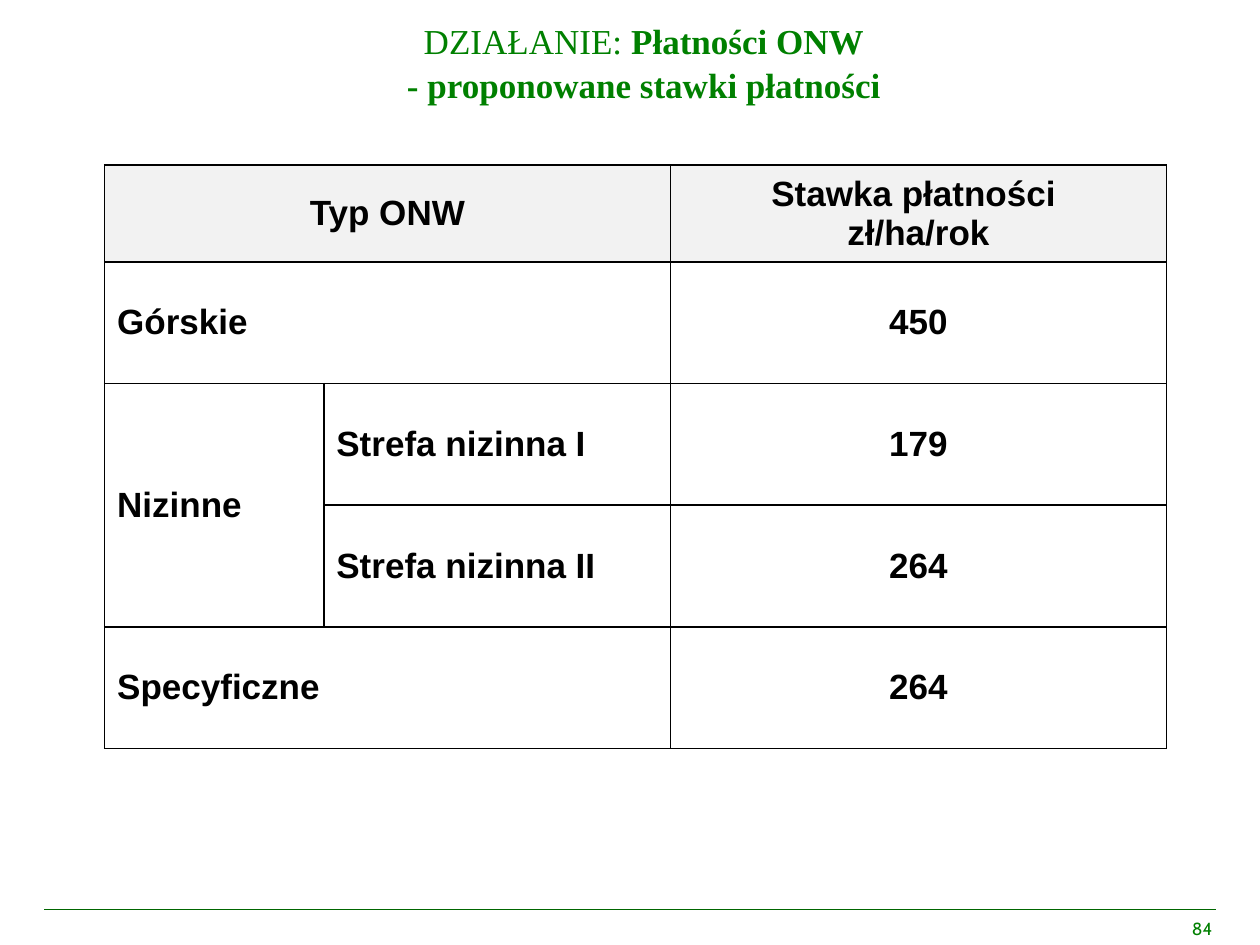
import pptx
import pptx.util
import pptx.dml.color
import pptx.enum.text
import pptx.enum.shapes
import pptx.oxml
import pptx.oxml.ns

WIDE, HIGH = 10, 7.5
HUES = {"green": "008000", "rule": "006600", "black": "000000", "head": "F2F2F2"}
COLS = [1.74, 2.75, 3.94]
ROWS = [0.77] + [0.965] * 4
CELLS = [
    (0, 0, 1, 2, "Typ ONW"),
    (0, 2, 1, 1, "Stawka płatności \nzł/ha/rok"),
    (1, 0, 1, 2, "Górskie"),
    (1, 2, 1, 1, "450"),
    (2, 0, 2, 1, "Nizinne"),
    (2, 1, 1, 1, "Strefa nizinna I"),
    (2, 2, 1, 1, "179"),
    (3, 1, 1, 1, "Strefa nizinna II"),
    (3, 2, 1, 1, "264"),
    (4, 0, 1, 2, "Specyficzne"),
    (4, 2, 1, 1, "264"),
]
ALIGN = pptx.enum.text.PP_ALIGN
MIDDLE = pptx.enum.text.MSO_ANCHOR.MIDDLE
inch = pptx.util.Inches


def hue(name):
    return pptx.dml.color.RGBColor.from_string(HUES[name])


def style(para, face, size, tint, align, bold=None):
    para.alignment = align
    font = para.font
    font.name, font.size, font.bold = face, pptx.util.Pt(size), bold
    font.color.rgb = hue(tint)


def add_title(slide):
    title = slide.shapes.title
    title.left, title.top = inch(-0.28), inch(0.21)
    title.width, title.height = inch(WIDE + 0.28), inch(0.55)
    frame = title.text_frame
    frame.auto_size = pptx.enum.text.MSO_AUTO_SIZE.NONE
    frame.vertical_anchor = MIDDLE
    first, last = frame.paragraphs[0], frame.add_paragraph()
    first.add_run().text = "DZIAŁANIE:"
    for para, text in ((first, " Płatności ONW"), (last, "- proponowane stawki płatności")):
        run = para.add_run()
        run.text = text
        run.font.bold = True
        props = para._p.get_or_add_pPr()
        props.set("marL", str(inch(0.5)))
        props.set("indent", "0")
        para.line_spacing = 1.05
        style(para, "Times New Roman", 20, "green", ALIGN.CENTER)


def edge(cell):
    props = cell._tc.get_or_add_tcPr()
    for side in ("lnL", "lnR", "lnT", "lnB"):
        props.append(pptx.oxml.parse_xml(
            f'<a:{side} {pptx.oxml.ns.nsdecls("a")} w="12700"><a:solidFill>'
            f'<a:srgbClr val="{HUES["black"]}"/></a:solidFill></a:{side}>'))


def add_rates(slide):
    table = slide.shapes.add_table(
        len(ROWS), len(COLS), inch(0.83), inch(1.31),
        inch(sum(COLS)), inch(sum(ROWS))).table
    table.horz_banding = False
    for col, width in zip(table.columns, COLS):
        col.width = inch(width)
    for row, height in zip(table.rows, ROWS):
        row.height = inch(height)
    for cell in table.iter_cells():
        edge(cell)
        cell.fill.background()
    for row, col, down, across, text in CELLS:
        cell = table.cell(row, col)
        if down * across > 1:
            cell.merge(table.cell(row + down - 1, col + across - 1))
        if row == 0:
            cell.fill.solid()
            cell.fill.fore_color.rgb = hue("head")
        cell.vertical_anchor = MIDDLE
        cell.text = text
        align = ALIGN.CENTER if row == 0 or col == 2 else ALIGN.LEFT
        for para in cell.text_frame.paragraphs:
            style(para, "Arial", 20, "black", align, True)


def add_foot(slide):
    side, y = 0.035 * WIDE, inch(7.22)
    line = slide.shapes.add_connector(
        pptx.enum.shapes.MSO_CONNECTOR.STRAIGHT, inch(side), y, inch(WIDE - side), y)
    line.line.color.rgb = hue("rule")
    line.line.width = pptx.util.Pt(0.25)
    line._element.spPr.append(pptx.oxml.parse_xml(
        f'<a:effectLst {pptx.oxml.ns.nsdecls("a")}/>'))
    frame = slide.shapes.add_textbox(inch(6.81), inch(7.24), inch(2.91), inch(0.29)).text_frame
    frame.word_wrap = True
    frame.text = "84"
    style(frame.paragraphs[0], "Cabin", 10, "green", ALIGN.RIGHT)


def main():
    deck = pptx.Presentation()
    deck.slide_width, deck.slide_height = inch(WIDE), inch(HIGH)
    slide = deck.slides.add_slide(deck.slide_layouts[5])
    add_title(slide)
    add_rates(slide)
    add_foot(slide)
    deck.save("out.pptx")


if __name__ == "__main__":
    main()
